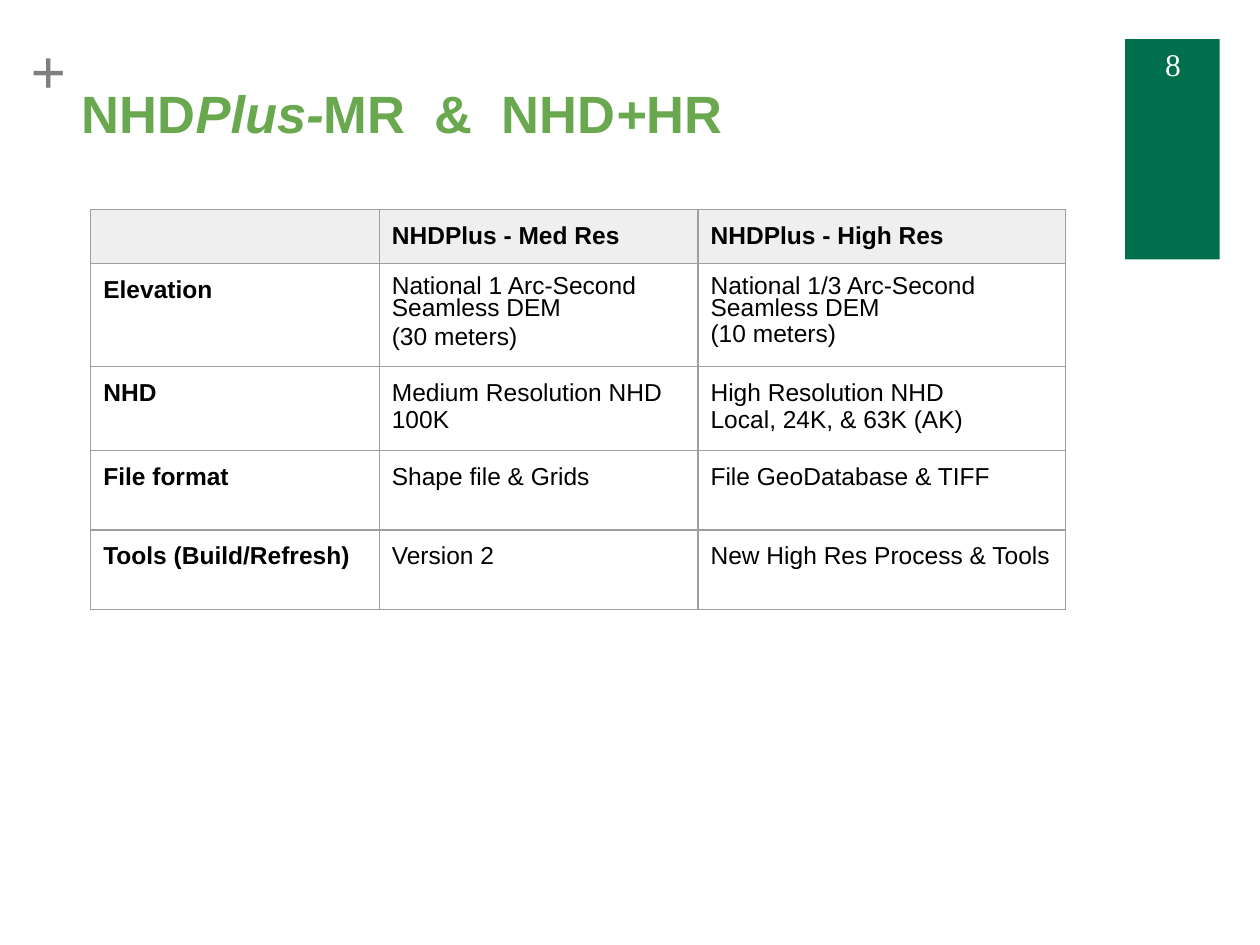
"""Build a slide comparing the medium and high resolution NHDPlus data sets."""
from dataclasses import dataclass

from lxml import etree
from pptx import Presentation
from pptx.dml.color import RGBColor
from pptx.enum import shapes, text
from pptx.oxml.ns import qn
from pptx.util import Inches, Pt


@dataclass(frozen=True)
class Theme:
    sans: str = "Arial"
    serif: str = "Times New Roman"
    title: str = "6AA84F"
    banner: str = "006F4B"
    number: str = "FFFFFF"
    plus: str = "7F7F7F"
    ink: str = "000000"
    header: str = "EFEFEF"
    border: str = "9E9E9E"
    title_size: int = 30
    plus_size: int = 36
    number_size: int = 18
    table_size: int = 14


THEME = Theme()
TITLE_RUNS = [("NHD", False), ("Plus-", True), ("MR  &  NHD", False), ("+", True), ("HR", False)]
ROWS = [
    ("", "NHDPlus - Med Res", "NHDPlus - High Res"),
    ("Elevation", "National 1 Arc-Second Seamless DEM\n(30 meters)",
     "National 1/3 Arc-Second Seamless DEM\n(10 meters)"),
    ("NHD", "Medium Resolution NHD\n100K", "High Resolution NHD\nLocal, 24K, & 63K (AK)"),
    ("File format", "Shape file & Grids", "File GeoDatabase & TIFF"),
    ("Tools (Build/Refresh)", "Version 2", "New High Res Process & Tools"),
]
COLUMN_WIDTHS = [2.29, 2.53, 2.92]
ROW_HEIGHTS = [0.42, 0.78, 0.63, 0.63, 0.63]
TIGHT_PARAGRAPHS = {(1, 1, 0), (1, 1, 1), (1, 2, 0)}


def style_font(font, name, size, color, bold=False):
    font.name, font.size, font.bold = name, Pt(size), bold
    font.color.rgb = RGBColor.from_string(color)


def set_margins(frame, horizontal, vertical):
    frame.margin_left = frame.margin_right = Inches(horizontal)
    frame.margin_top = frame.margin_bottom = Inches(vertical)


def add_label(slide, box, wording, margins, alignment, *font_style):
    frame = slide.shapes.add_textbox(*map(Inches, box)).text_frame
    frame.word_wrap = True
    set_margins(frame, *margins)
    frame.text = wording
    paragraph = frame.paragraphs[0]
    paragraph.alignment = alignment
    style_font(paragraph.runs[0].font, *font_style)


def add_banner(slide):
    banner = slide.shapes.add_shape(
        shapes.MSO_SHAPE.RECTANGLE, *map(Inches, (8.93, 0.31, 0.75, 1.75)))
    banner.shadow.inherit = False
    banner.fill.solid()
    banner.fill.fore_color.rgb = RGBColor.from_string(THEME.banner)
    banner.line.fill.background()


def fill_title(title):
    title.left, title.top, title.width, title.height = map(Inches, (0.55, 0.15, 8.26, 1.09))
    frame = title.text_frame
    frame.word_wrap = True
    frame.auto_size = text.MSO_AUTO_SIZE.NONE
    frame.vertical_anchor = text.MSO_ANCHOR.BOTTOM
    set_margins(frame, 0.1, 0.1)
    paragraph = frame.paragraphs[0]
    paragraph.alignment = text.PP_ALIGN.LEFT
    for wording, italic in TITLE_RUNS:
        run = paragraph.add_run()
        run.text = wording
        style_font(run.font, THEME.sans, THEME.title_size, THEME.title, True)
        run.font.italic = italic


def draw_borders(cell):
    properties = cell._tc.get_or_add_tcPr()
    for position, side in enumerate(("a:lnL", "a:lnR", "a:lnT", "a:lnB")):
        line = etree.Element(qn(side), w=str(Pt(0.75)))
        solid = etree.SubElement(line, qn("a:solidFill"))
        etree.SubElement(solid, qn("a:srgbClr"), val=THEME.border)
        properties.insert(position, line)


def fill_cell(cell, row, column, wording):
    cell.margin_left = cell.margin_right = cell.margin_top = cell.margin_bottom = Inches(0.1)
    if row == 0:
        cell.fill.solid()
        cell.fill.fore_color.rgb = RGBColor.from_string(THEME.header)
    else:
        cell.fill.background()
    draw_borders(cell)
    cell.text_frame.text = wording
    for index, paragraph in enumerate(cell.text_frame.paragraphs):
        if (row, column, index) in TIGHT_PARAGRAPHS:
            paragraph.line_spacing = 0.8
            paragraph.space_before = Pt(4 if index else 0)
        for font in [paragraph.font] + [run.font for run in paragraph.runs]:
            style_font(font, THEME.sans, THEME.table_size, THEME.ink, row == 0 or column == 0)


def add_comparison(slide):
    table = slide.shapes.add_table(
        len(ROWS), len(COLUMN_WIDTHS), Inches(0.72), Inches(1.66),
        Inches(sum(COLUMN_WIDTHS)), Inches(sum(ROW_HEIGHTS))).table
    table.first_row = table.horz_banding = False
    for column, width in zip(table.columns, COLUMN_WIDTHS):
        column.width = Inches(width)
    for row, height in zip(table.rows, ROW_HEIGHTS):
        row.height = Inches(height)
    for row, wordings in enumerate(ROWS):
        for column, wording in enumerate(wordings):
            fill_cell(table.cell(row, column), row, column, wording)


def main():
    presentation = Presentation()
    presentation.slide_width, presentation.slide_height = Inches(10), Inches(7.5)
    slide = presentation.slides.add_slide(presentation.slide_layouts[5])
    add_banner(slide)
    add_label(slide, (0.24, 0.25, 0.29, 1.21), "+", (0, 0), text.PP_ALIGN.LEFT,
              THEME.serif, THEME.plus_size, THEME.plus, True)
    add_label(slide, (8.94, 0.31, 0.74, 0.4), "8", (0.1, 0.05), text.PP_ALIGN.CENTER,
              THEME.serif, THEME.number_size, THEME.number)
    fill_title(slide.shapes.title)
    add_comparison(slide)
    presentation.save("out.pptx")


if __name__ == "__main__":
    main()
